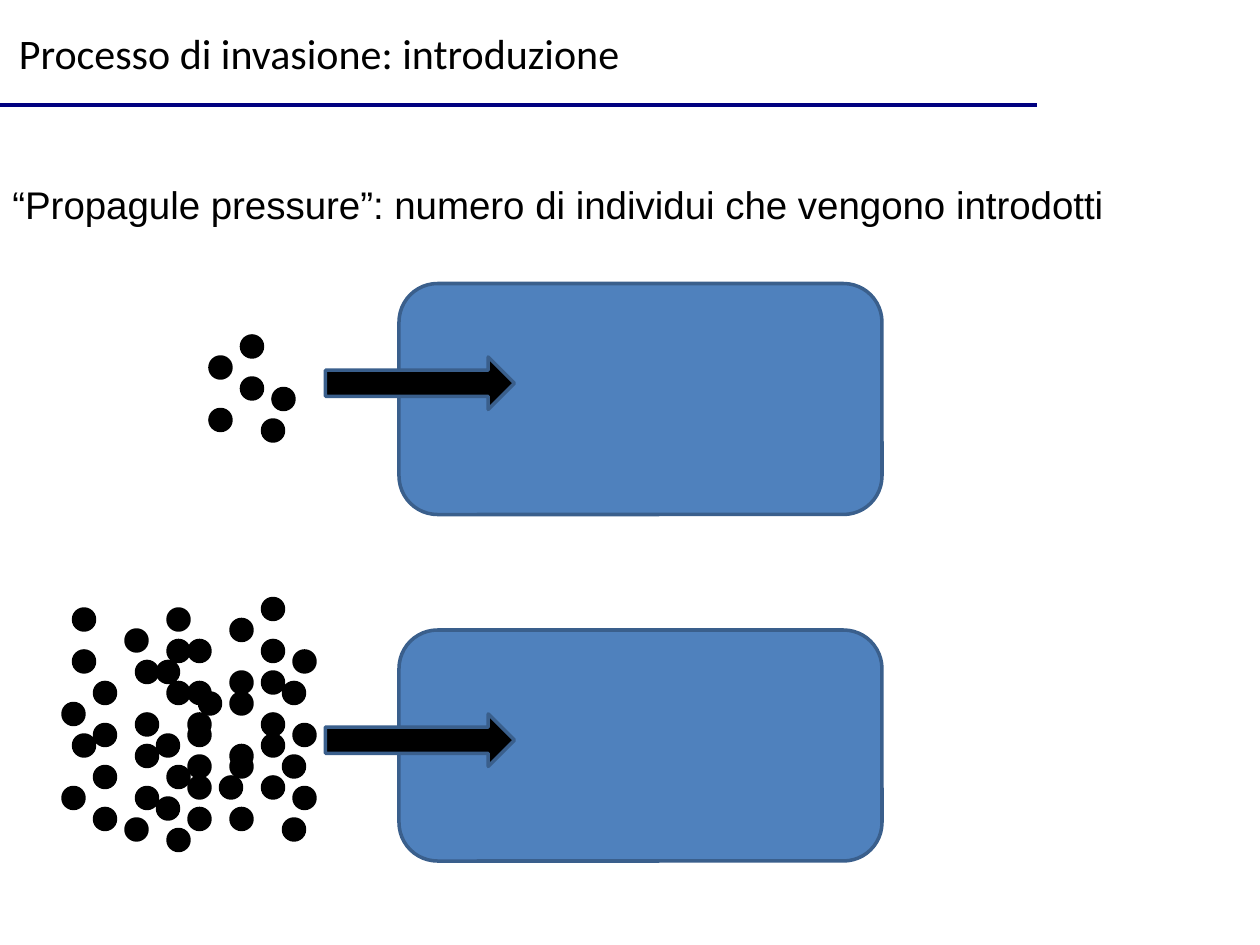
from lxml import etree
from pptx import Presentation
from pptx.dml.color import RGBColor
from pptx.enum import shapes, text
from pptx.oxml.ns import qn
from pptx.util import Pt

TITLE = "Processo di invasione: introduzione"
STATEMENT = "“Propagule pressure”: numero di individui che vengono introdotti"
THEME = {
    "title": ("Calibri", 24),
    "statement": ("Arial", 22),
    "black": RGBColor(0, 0, 0),
    "rule": RGBColor(0, 0, 0x80),
    "habitat": RGBColor(0x4F, 0x81, 0xBD),
    "outline": RGBColor(0x3A, 0x5F, 0x8C),
    "line": 2,
}
GRID = 6
DOT = 2
SCENARIOS = [
    {
        "habitat": (38, 27, 46, 22),
        "arrow": (31, 34, 18, 5),
        "individuals": {20: [34, 39], 23: [32, 36], 25: [40], 26: [37]},
    },
    {
        "habitat": (38, 60, 46, 22),
        "arrow": (31, 68, 18, 5),
        "individuals": {
            6: [67, 75],
            7: [58, 62, 70],
            9: [65, 69, 73, 77],
            12: [60, 78],
            13: [63, 68, 71, 75],
            15: [63, 70, 76],
            16: [58, 61, 65, 73, 79],
            18: [61, 65, 68, 69, 72, 74, 77],
            19: [66],
            21: [74],
            22: [59, 64, 66, 71, 72, 77],
            25: [57, 61, 64, 68, 70, 74],
            27: [65, 72, 78],
            28: [62, 69, 75],
        },
    },
]


def add_shape(s, kind, box, fill, line):
    sp = s.shapes.add_shape(kind, *(Pt(n * GRID) for n in box))
    sp.shadow.inherit = False
    sp.fill.solid()
    sp.fill.fore_color.rgb = THEME[fill]
    sp.line.color.rgb = THEME[line]
    sp.line.width = Pt(THEME["line"])


def write(sp, box, words, style, anchor, wrap):
    sp.left, sp.top, sp.width, sp.height = (Pt(n) for n in box)
    tf = sp.text_frame
    tf.word_wrap = wrap
    tf.auto_size = text.MSO_AUTO_SIZE.NONE
    tf.vertical_anchor = anchor
    p = tf.paragraphs[0]
    p.alignment = text.PP_ALIGN.LEFT
    r = p.add_run()
    r.text = words
    r.font.name, size = THEME[style]
    r.font.size = Pt(size)
    r.font.color.rgb = THEME["black"]


def main():
    prs = Presentation()
    prs.slide_width, prs.slide_height = Pt(720), Pt(540)
    s = prs.slides.add_slide(prs.slide_layouts[5])

    write(s.shapes.title, (3.6, 12.2, 361, 65.5), TITLE, "title",
          text.MSO_ANCHOR.TOP, False)
    statement = s.shapes.add_textbox(0, 0, 0, 0)
    write(statement, (0, 99.4, 690, 34), STATEMENT, "statement",
          text.MSO_ANCHOR.MIDDLE, True)

    rule = s.shapes.add_connector(
        shapes.MSO_CONNECTOR.STRAIGHT, 0, Pt(60), Pt(592.5), Pt(60))
    rule.line.color.rgb = THEME["rule"]
    rule.line.width = Pt(THEME["line"])
    etree.SubElement(rule._element.spPr, qn("a:effectLst"))

    kinds = shapes.MSO_SHAPE
    for scenario in SCENARIOS:
        for x, rows in scenario["individuals"].items():
            for y in rows:
                add_shape(s, kinds.OVAL, (x, y, DOT, DOT), "black", "black")
        add_shape(s, kinds.ROUNDED_RECTANGLE, scenario["habitat"],
                  "habitat", "outline")
        add_shape(s, kinds.RIGHT_ARROW, scenario["arrow"], "black", "outline")

    prs.save("out.pptx")


if __name__ == "__main__":
    main()
